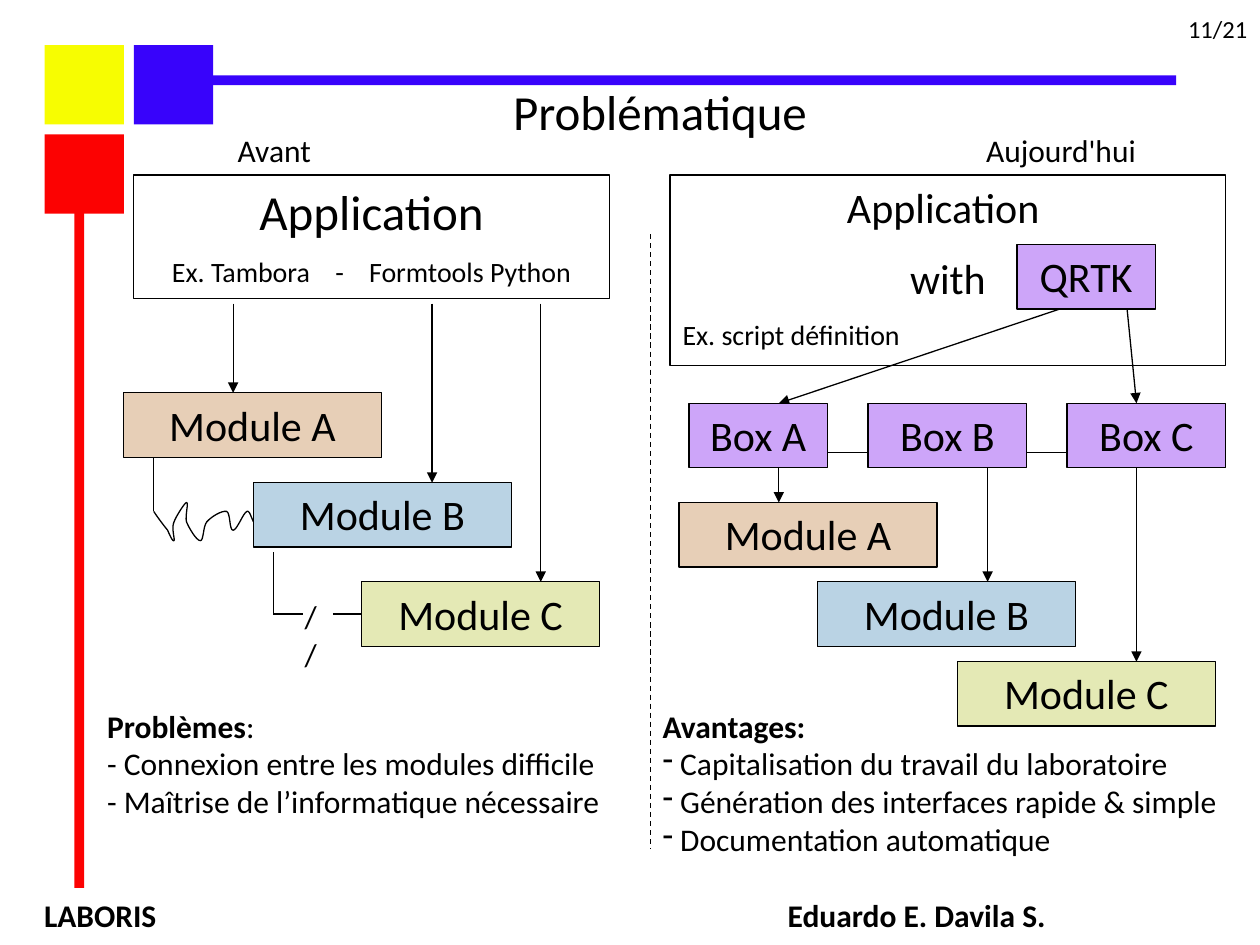
from dataclasses import dataclass
from itertools import pairwise

from lxml.etree import SubElement
from pptx import Presentation
from pptx.dml.color import RGBColor
from pptx.enum.dml import MSO_LINE
from pptx.enum.shapes import MSO_CONNECTOR, MSO_SHAPE
from pptx.enum.text import MSO_ANCHOR, PP_ALIGN
from pptx.oxml.ns import qn
from pptx.util import Cm, Pt

BLACK, YELLOW, RED, BLUE = "000000", "F7FD01", "FC0202", "3803FB"
TAN, SKY, LIME, VIOLET = "E7CFB7", "BAD3E4", "E4E9B5", "CDA5F9"
BOX_HEIGHT = 1.3
BREAK_LEVEL = 12.38


@dataclass
class Block:
    text: str
    left: float
    top: float
    width: float
    color: str


@dataclass
class Wire:
    x1: float
    y1: float
    x2: float
    y2: float
    arrow: bool = False


@dataclass
class Line:
    text: str
    size: float = 18
    align: PP_ALIGN = PP_ALIGN.LEFT
    bold: bool = False
    bullet: bool = False


deck = Presentation()
deck.slide_width, deck.slide_height = Cm(25.4), Cm(19.05)
page = deck.slides.add_slide(deck.slide_layouts[6])


def paint(color_format, color: str) -> None:
    color_format.rgb = RGBColor.from_string(color)


def outline(line) -> None:
    paint(line.color, BLACK)
    line.width = Pt(0.75)


def format_span(span, size: float, bold: bool = False) -> None:
    span.font.name, span.font.size, span.font.bold = "Calibri", Pt(size), bold
    paint(span.font.color, BLACK)


def write(shape, lines: list[Line], wrap: bool = True) -> None:
    """Fill a shape with lines; centred shapes get half a line between paragraphs."""
    frame = shape.text_frame
    frame.text = "\n".join(line.text for line in lines)
    frame.word_wrap, frame.vertical_anchor = wrap, MSO_ANCHOR.TOP
    spaced = lines[0].align == PP_ALIGN.CENTER
    for number, (para, line) in enumerate(zip(frame.paragraphs, lines)):
        para.alignment = line.align
        if spaced and number:
            para.space_before = Pt(line.size / 2)
        if line.bullet:
            properties = para._p.get_or_add_pPr()
            properties.set("marL", "0")
            properties.set("indent", "0")
            SubElement(properties, qn("a:buChar")).set("char", "-")
        for span in para.runs:
            format_span(span, line.size, line.bold)


def add_text(left: float, top: float, width: float, height: float,
             lines: list[Line], wrap: bool = True):
    box = page.shapes.add_textbox(Cm(left), Cm(top), Cm(width), Cm(height))
    write(box, lines, wrap)
    return box


def add_rectangle(left: float, top: float, width: float, height: float,
                  color: str = "", outlined: bool = False):
    shape = page.shapes.add_shape(MSO_SHAPE.RECTANGLE, Cm(left), Cm(top), Cm(width), Cm(height))
    shape.shadow.inherit = False
    if color:
        shape.fill.solid()
        paint(shape.fill.fore_color, color)
    else:
        shape.fill.background()
    if outlined:
        outline(shape.line)
    else:
        shape.line.fill.background()
    return shape


def add_block(block: Block):
    shape = add_rectangle(block.left, block.top, block.width, BOX_HEIGHT, block.color, True)
    write(shape, [Line(block.text, 24, PP_ALIGN.CENTER)])
    return shape


def add_wire(wire: Wire):
    connector = page.shapes.add_connector(
        MSO_CONNECTOR.STRAIGHT, Cm(wire.x1), Cm(wire.y1), Cm(wire.x2), Cm(wire.y2))
    outline(connector.line)
    if wire.arrow:
        SubElement(connector.line._get_or_add_ln(), qn("a:tailEnd")).set("type", "triangle")
    SubElement(connector._element.spPr, qn("a:effectLst"))
    return connector


def add_squiggle(start: tuple, curves: list[tuple], steps: int = 8) -> None:
    """Draw joined cubic curves, each given as two control points and an end point."""
    points = []
    ends = [start] + [curve[2] for curve in curves]
    for (begin, end), (first, second, _) in zip(pairwise(ends), curves):
        for step in range(1, steps + 1):
            t = step / steps
            weights = ((1 - t) ** 3, 3 * t * (1 - t) ** 2, 3 * t * t * (1 - t), t ** 3)
            controls = (begin, first, second, end)
            points.append(tuple(Cm(sum(w * c[axis] for w, c in zip(weights, controls)))
                                for axis in (0, 1)))
    builder = page.shapes.build_freeform(Cm(start[0]), Cm(start[1]))
    builder.add_line_segments(points, close=False)
    squiggle = builder.convert_to_shape()
    squiggle.shadow.inherit = False
    squiggle.fill.background()
    outline(squiggle.line)


# Frame of the page
add_wire(Wire(15.7, 9.12, 23.5, 9.12))
for column, row, color in ((0, 0, YELLOW), (0, 1, RED), (1, 0, BLUE)):
    add_rectangle(0.9 + 1.8 * column, 0.91 + 1.8 * row, 1.6, 1.6, color)
add_rectangle(3.9, 1.52, 19.81, 0.2, BLUE)
add_rectangle(1.5, 4.11, 0.2, 13.79, RED)
add_wire(Wire(13.11, 4.72, 13.11, 17.12)).line.dash_style = MSO_LINE.DASH

add_text(8.71, 1.52, 9.19, 1.45, [Line("Problématique", 28, PP_ALIGN.CENTER)])
for left, heading in ((3.53, "Avant"), (19.39, "Aujourd'hui")):
    add_text(left, 2.51, 4, 1.02, [Line(heading, align=PP_ALIGN.CENTER)])
for left, width, label in ((0.64, 5, "LABORIS"), (15.63, 9, "Eduardo E. Davila S.")):
    add_text(left, 17.93, width, 0.8, [Line(label, bold=True)])
add_text(23.7, 0.15, 1.7, 0.84, [Line("11/21", 14)], wrap=False)

# Lists under the two diagrams
problems = add_text(1.91, 14.12, 11.4, 2.54, [
    Line("Problèmes", bold=True),
    Line("- Connexion entre les modules difficile"),
    Line("- Maîtrise de l’informatique nécessaire"),
])
colon = problems.text_frame.paragraphs[0].add_run()
colon.text = ":"
format_span(colon, 18)
add_text(13.11, 14.12, 12.29, 4.06, [
    Line("Avantages:", bold=True),
    Line(" Capitalisation du travail du laboratoire", bullet=True),
    Line(" Génération des interfaces rapide & simple", bullet=True),
    Line(" Documentation automatique", bullet=True),
])

# Applications
before = add_rectangle(2.69, 3.53, 9.6, 2.49, outlined=True)
write(before, [Line("Application", 28, PP_ALIGN.CENTER),
               Line("Ex. Tambora", 16, PP_ALIGN.CENTER)])
for piece in (" ", "-", " ", "Formtools Python"):
    span = before.text_frame.paragraphs[1].add_run()
    span.text = piece
    format_span(span, 16)
    if piece == " ":
        span._r.get_or_add_rPr().set("spc", "1080")
today = add_rectangle(13.51, 3.53, 11.2, 3.84, outlined=True)
write(today, [Line("Application ", 24, PP_ALIGN.CENTER), Line("with", 24, PP_ALIGN.CENTER),
              Line("Ex. script définition", 16)])

# Wires
for wire in (
    Wire(4.7, 6.12, 4.7, 7.92, True),
    Wire(8.71, 6.12, 8.71, 9.73, True),
    Wire(10.9, 6.12, 10.9, 11.73, True),
    Wire(15.7, 9.12, 15.7, 10.13, True),
    Wire(19.91, 8.74, 19.91, 11.73, True),
    Wire(22.91, 8.92, 22.91, 13.34, True),
    Wire(21.69, 6.12, 15.7, 8.13, True),
    Wire(22.71, 6.12, 22.91, 8.13, True),
    Wire(3.1, 8.92, 3.1, 10.31),
    Wire(5.51, 11.13, 5.51, BREAK_LEVEL),
    Wire(5.51, BREAK_LEVEL, 6.1, BREAK_LEVEL),
):
    add_wire(wire)
add_text(5.89, 11.91, 0.86, 1.02, [Line("//")])
add_squiggle((3.1, 10.31), [
    ((3.2, 10.46), (3.3, 10.59), (3.38, 10.69)),
    ((3.43, 10.8), (3.48, 10.92), (3.51, 10.9)),
    ((3.53, 10.87), (3.45, 10.64), (3.51, 10.52)),
    ((3.56, 10.39), (3.73, 10.13), (3.76, 10.13)),
    ((3.81, 10.13), (3.73, 10.39), (3.76, 10.52)),
    ((3.81, 10.64), (3.96, 10.9), (4.04, 10.9)),
    ((4.11, 10.9), (4.09, 10.62), (4.17, 10.52)),
    ((4.27, 10.41), (4.47, 10.29), (4.57, 10.31)),
    ((4.65, 10.34), (4.62, 10.69), (4.7, 10.69)),
    ((4.78, 10.69), (4.9, 10.34), (4.98, 10.31)),
    ((5.03, 10.29), (5.05, 10.39), (5.11, 10.52)),
])

# Modules and boxes
for block in (
    Block("Module A", 2.49, 7.92, 5.2, TAN),
    Block("Module B", 5.11, 9.73, 5.2, SKY),
    Block("Module A", 13.69, 10.13, 5.2, TAN),
    Block("Module B", 16.48, 11.73, 5.2, SKY),
    Block("Module C", 19.3, 13.34, 5.2, LIME),
    Block("Box A", 13.89, 8.13, 2.79, VIOLET),
    Block("Box B", 17.5, 8.13, 3.2, VIOLET),
    Block("Box C", 21.51, 8.13, 3.2, VIOLET),
    Block("QRTK", 20.5, 4.93, 2.79, VIOLET),
):
    add_block(block)
module_c = add_block(Block("Module C", 7.29, 11.73, 4.8, LIME))
add_wire(Wire(6.71, BREAK_LEVEL, 7.29, BREAK_LEVEL)).end_connect(module_c, 1)

deck.save("out.pptx")
